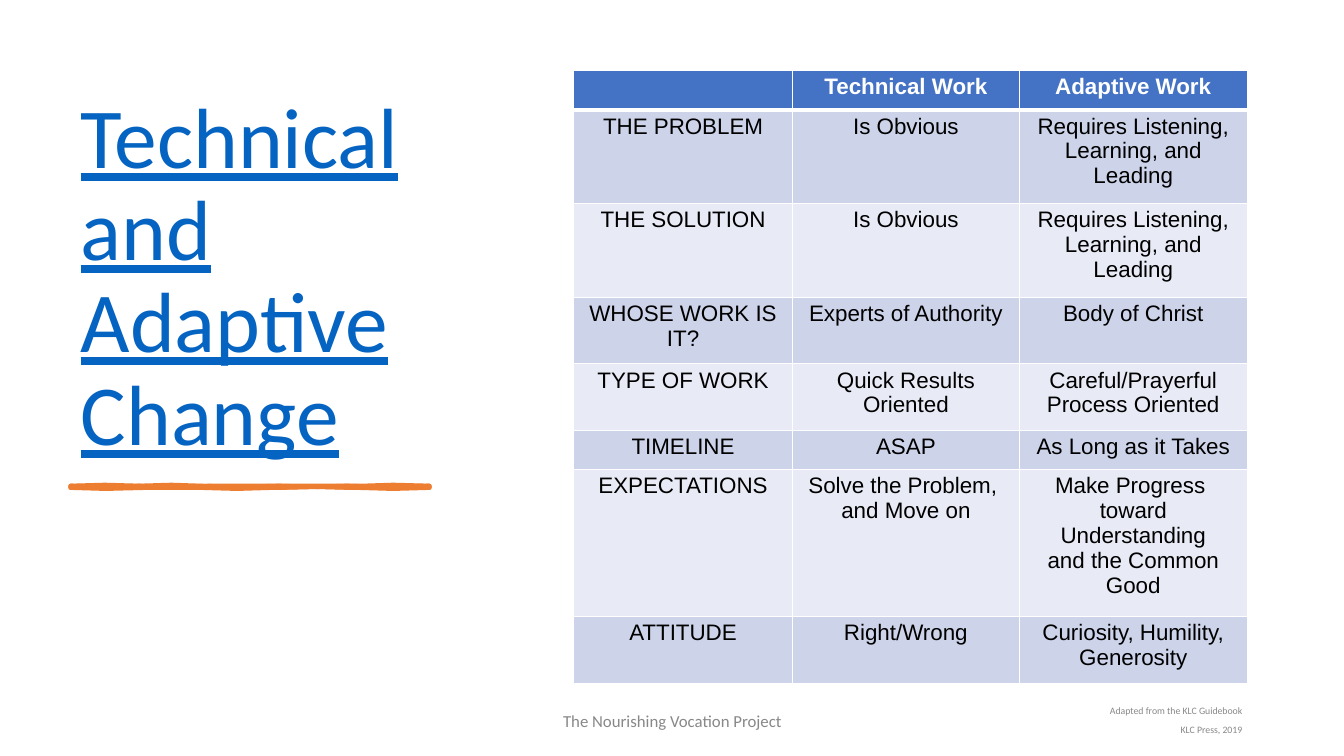
from lxml.etree import SubElement as Sub
from pptx import Presentation
from pptx.dml.color import RGBColor as RGB
from pptx.enum.text import MSO_ANCHOR as Anchor, MSO_AUTO_SIZE as Auto, PP_ALIGN as Align
from pptx.oxml.ns import qn
from pptx.util import Inches, Pt

COLORS = {
    "link": "0563C1", "brush": "ED7D31", "note": "888888", "head": "4472C4",
    "odd": "CDD4EA", "even": "E8EBF5", "white": "FFFFFF", "black": "000000",
}
COLS = [2.17, 2.25, 2.26]
HEIGHTS = [0.39, 0.93, 0.93, 0.66, 0.66, 0.39, 1.46, 0.66]
ROWS = [
    ["", "Technical Work", "Adaptive Work"],
    ["THE PROBLEM", "Is Obvious", "Requires Listening, Learning, and Leading"],
    ["THE SOLUTION", "Is Obvious", "Requires Listening, Learning, and Leading"],
    ["WHOSE WORK IS IT?", "Experts of Authority", "Body of Christ"],
    ["TYPE OF WORK", "Quick Results Oriented", "Careful/Prayerful Process Oriented"],
    ["TIMELINE", "ASAP", "As Long as it Takes"],
    ["EXPECTATIONS", "Solve the Problem, \nand Move on",
     "Make Progress \ntoward Understanding\nand the Common Good"],
    ["ATTITUDE", "Right/Wrong", "Curiosity, Humility, Generosity"],
]
STROKES = [
    [(0.7, 4.82), (1.04, 4.81), (1.38, 4.82), (1.6, 4.83), (2.09, 4.82), (2.84, 4.82),
     (3.2, 4.82), (3.59, 4.82), (3.9, 4.81), (4.26, 4.82), (4.26, 4.84), (3.9, 4.84),
     (3.48, 4.84), (3.1, 4.83), (2.7, 4.84), (2.35, 4.85), (1.99, 4.84), (0.7, 4.84)],
    [(0.7, 4.82), (1.05, 4.83), (1.38, 4.82), (1.7, 4.81), (1.99, 4.82), (2.35, 4.83),
     (2.77, 4.82), (3.1, 4.83), (3.44, 4.82), (3.8, 4.83), (4.26, 4.82), (4.26, 4.84),
     (3.9, 4.85), (3.55, 4.84), (3.2, 4.83), (2.77, 4.84), (2.16, 4.84), (1.45, 4.84),
     (1.05, 4.85), (0.7, 4.84)],
]


def color(name):
    return RGB.from_string(COLORS[name])


def style(frame, face, size, tone, align, space=None, bold=False):
    """Format every paragraph and run of a text frame."""
    for par in frame.paragraphs:
        par.alignment = align
        par.line_spacing = space
        for font in [par.font] + [run.font for run in par.runs]:
            font.name, font.size, font.bold = face, Pt(size), bold
            font.color.rgb = color(tone)


def add_title(slide):
    title = slide.shapes.title
    title.left, title.top = Inches(0.7), Inches(0.74)
    title.width, title.height = Inches(4.21), Inches(3.91)
    frame = title.text_frame
    frame.text = "Technical and Adaptive Change"
    frame.word_wrap, frame.auto_size = True, Auto.NONE
    frame.vertical_anchor = Anchor.BOTTOM
    style(frame, "Calibri", 61, "link", Align.LEFT, 0.9)
    frame.paragraphs[0].runs[0].font.underline = True


def add_brush(slide):
    """Draw the hand-made rule under the title."""
    first, *rest = [[(Inches(x), Inches(y)) for x, y in stroke] for stroke in STROKES]
    pen = slide.shapes.build_freeform(*first[0])
    pen.add_line_segments(first[1:], close=True)
    for stroke in rest:
        pen.move_to(*stroke[0])
        pen.add_line_segments(stroke[1:], close=True)
    brush = pen.convert_to_shape()
    brush.shadow.inherit = False
    brush.fill.solid()
    brush.fill.fore_color.rgb = color("brush")
    brush.line.color.rgb = color("brush")
    brush.line.width = Pt(3)


def add_note(slide, left, width, text, size, align, space=None):
    box = slide.shapes.add_textbox(Inches(left), Inches(6.95), Inches(width), Inches(0.4))
    frame = box.text_frame
    frame.text = text
    frame.word_wrap = True
    frame.vertical_anchor = Anchor.MIDDLE
    style(frame, "Calibri", size, "note", align, space)
    for par in frame.paragraphs[1:]:
        par.space_before = Pt(6)


def add_edges(cell, top, bottom):
    """Give a cell white borders; top and bottom are widths in points."""
    props = cell._tc.get_or_add_tcPr()
    for side, width in zip("LRTB", (1, 1, top, bottom)):
        line = Sub(props, qn(f"a:ln{side}"), w=str(Pt(width)))
        Sub(Sub(line, qn("a:solidFill")), qn("a:srgbClr"), val=COLORS["white"])


def add_grid(slide):
    table = slide.shapes.add_table(
        len(ROWS), len(COLS), Inches(5.69), Inches(0.7),
        Inches(sum(COLS)), Inches(sum(HEIGHTS))).table
    for col, width in zip(table.columns, COLS):
        col.width = Inches(width)
    for i, (row, height) in enumerate(zip(table.rows, HEIGHTS)):
        row.height = Inches(height)
        head = i == 0
        fill = "head" if head else "odd" if i % 2 else "even"
        for cell, text in zip(row.cells, ROWS[i]):
            cell.text = text
            cell.margin_left = cell.margin_right = Inches(0.09)
            cell.margin_top = cell.margin_bottom = Inches(0.04)
            style(cell.text_frame, "Arial", 16, "white" if head else "black",
                  Align.CENTER, bold=head)
            add_edges(cell, 3 if i == 1 else 1, 3 if head else 1)
            cell.fill.solid()
            cell.fill.fore_color.rgb = color(fill)


def main():
    deck = Presentation()
    deck.slide_width, deck.slide_height = Inches(13.33), Inches(7.5)
    slide = deck.slides.add_slide(deck.slide_layouts[5])
    add_title(slide)
    add_brush(slide)
    add_note(slide, 4.42, 4.5, "The Nourishing Vocation Project", 12, Align.CENTER)
    add_note(slide, 9.42, 3, "Adapted from the KLC Guidebook\nKLC Press, 2019",
             7, Align.RIGHT, 0.9)
    add_grid(slide)
    deck.save("out.pptx")


if __name__ == "__main__":
    main()
